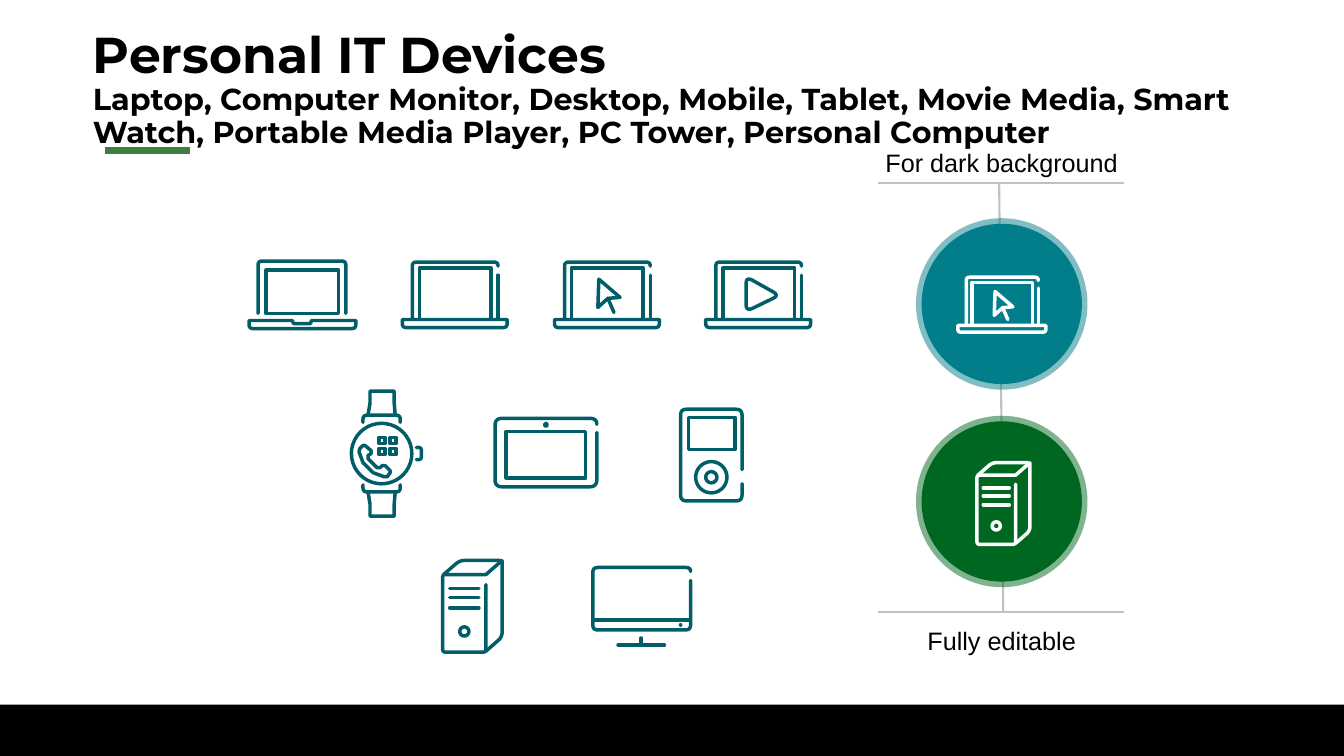
from math import cos, pi, sin

from lxml import etree
from pptx import Presentation
from pptx.dml.color import RGBColor
from pptx.enum.shapes import MSO_CONNECTOR, MSO_SHAPE
from pptx.enum.text import MSO_ANCHOR, MSO_AUTO_SIZE, PP_ALIGN
from pptx.oxml.ns import qn
from pptx.util import Inches, Pt

RECT, OVAL = MSO_SHAPE.RECTANGLE, MSO_SHAPE.OVAL
STRAIGHT = MSO_CONNECTOR.STRAIGHT
LEFT, CENTER = PP_ALIGN.LEFT, PP_ALIGN.CENTER
MIDDLE = MSO_ANCHOR.MIDDLE
NO_FIT, GROW = MSO_AUTO_SIZE.NONE, MSO_AUTO_SIZE.SHAPE_TO_FIT_TEXT

BLACK, WHITE, GREY = "000000", "FFFFFF", "BCC4C0"
ICON, TEAL, GREEN, ACCENT = "015E68", "027E8A", "006721", "3D7E41"


def rgb(value):
    return RGBColor.from_string(value)


def add_text(p, text, size=18, font="Arial", color=BLACK, bold=False):
    r = p.add_run()
    r.text = text
    r.font.size, r.font.name, r.font.bold = Pt(size), font, bold
    r.font.color.rgb = rgb(color)


# Icon outlines are in hundredths of an inch from the icon's top left corner
def path(*corners, closed=False):
    """Outline through corners (x, y) or (x, y, corner radius)."""
    points = []
    for i, (x, y, *radius) in enumerate(corners):
        if not radius:
            points.append((x, y))
            continue
        ends = []
        for nx, ny, *_ in (corners[i - 1], corners[(i + 1) % len(corners)]):
            length = ((nx - x) ** 2 + (ny - y) ** 2) ** 0.5
            t = min(1, radius[0] / length)
            ends.append((x + (nx - x) * t, y + (ny - y) * t))
        (ax, ay), (bx, by) = ends
        for t in (0, 0.2, 0.4, 0.6, 0.8, 1):
            u = 1 - t
            points.append((u * u * ax + 2 * u * t * x + t * t * bx,
                           u * u * ay + 2 * u * t * y + t * t * by))
    return points, closed


def box(x1, y1, x2, y2):
    return path((x1, y1), (x2, y1), (x2, y2), (x1, y2), closed=True)


def circle(x, y, radius, steps=40):
    angles = [2 * pi * i / steps for i in range(steps)]
    return [(x + radius * cos(a), y + radius * sin(a)) for a in angles], True


LAPTOP = [
    path((95, 13), (95, 56)),
    path((95, 4), (95, 0, 4), (10, 0, 4), (10, 56)),
    path((88, 56), (88, 6), (17, 6), (17, 56)),
    path((0, 57), (0, 65, 4), (104, 65, 4), (104, 57), closed=True),
]
POINTER_LAPTOP = LAPTOP + [
    path((65, 35), (44, 17), (43, 45), (53, 36), closed=True),
    path((59, 50), (53, 36)),
]
MOVIE_LAPTOP = LAPTOP + [
    path((40, 14.5, 7), (73, 33, 7), (40, 49, 7), closed=True),
]
NOTCHED_LAPTOP = [
    path((106, 59), (106, 67, 4), (0, 67, 4), (0, 59), (43, 59), (44, 62),
         (61, 62), (62, 59), closed=True),
    path((96, 52), (96, 0, 4), (9, 0, 4), (9, 52)),
    box(17, 9, 89, 52),
]
STRAP = [(43, 24), (42, 12), (42, 0), (18, 0), (18, 12), (16, 24)]
LUGS = [(48, 31), (48, 24, 4), (11, 24, 4), (11, 31)]
WATCH = [
    circle(29.5, 62, 30),
    path(*STRAP),
    path(*LUGS),
    path(*[(x, 124 - y) for x, y in STRAP]),
    path(*[(x, 124 - y, *radius) for x, y, *radius in LUGS]),
    path((64, 68), (69, 68, 3), (69, 56, 3), (64, 56)),
    path((38, 81), (35, 85), (32, 85), (21, 81), (11, 71), (7, 60), (8, 57),
         (11, 54), (13, 54), (19, 59), (19, 62), (16, 64), (16, 67), (25, 76),
         (28, 76), (30, 74), (33, 74), (38, 79), closed=True),
] + [box(x, y, x + 6, y + 6) for x in (27, 38) for y in (46, 57)]
TABLET = [
    path((101, 14), (101, 68, 7), (0, 68, 7), (0, 0, 7), (101, 0, 7), (101, 6)),
    box(11, 13, 90, 59),
    circle(50.5, 6.5, 1.5, steps=4),
]
MEDIA_PLAYER = [
    path((61, 74), (61, 91, 6), (0, 91, 6), (0, 0, 6), (61, 0, 6), (61, 60)),
    circle(30.5, 67.5, 15.5),
    circle(30.5, 67.5, 5.5),
    box(8, 8, 54, 40),
]
TOWER = [
    path((43, 14), (59, 0, 1), (59, 76, 5), (43, 90)),
    path((57, 0), (17, 0, 5), (1, 14)),
    path((43, 14), (0, 14, 3), (0, 91, 3), (43, 91, 3), (43, 24)),
    circle(21.5, 70.5, 4.5),
] + [path((7, y), (36, y)) for y in (28, 37, 47)]
MONITOR = [
    path((97, 13), (97, 62, 5), (0, 62, 5), (0, 0, 5), (97, 0, 5), (97, 4)),
    path((0, 52), (96, 52)),
    path((48, 70), (48, 76)),
    path((25, 77), (71, 77)),
    path((87, 57), (87.2, 57)),
]


class DeviceSlide:
    def __init__(self, prs):
        self.s = prs.slides.add_slide(prs.slide_layouts[5])
        self.shapes = self.s.shapes

    def title(self, heading, subtitle):
        sp = self.shapes.title
        sp.left, sp.top = Inches(0.92), Inches(0.4)
        sp.width, sp.height = Inches(11.5), Inches(0.98)
        tf = sp.text_frame
        tf.margin_left = tf.margin_right = tf.margin_top = tf.margin_bottom = 0
        tf.vertical_anchor, tf.word_wrap, tf.auto_size = MIDDLE, True, NO_FIT
        p = tf.paragraphs[0]
        p.alignment, p.line_spacing = LEFT, 0.9
        add_text(p, heading, size=36, font="Montserrat", bold=True)
        p.add_line_break()
        add_text(p, subtitle, size=21.6, font="Montserrat", bold=True)

    def label(self, text, x, y, w):
        sp = self.shapes.add_textbox(Inches(x), Inches(y), Inches(w), Inches(0.4))
        tf = sp.text_frame
        tf.word_wrap, tf.auto_size = True, GROW
        tf.paragraphs[0].alignment = CENTER
        add_text(tf.paragraphs[0], text)

    def shape(self, kind, x, y, w, h, fill, halo=0):
        sp = self.shapes.add_shape(kind, Inches(x), Inches(y), Inches(w), Inches(h))
        sp.shadow.inherit = False
        sp.fill.solid()
        sp.fill.fore_color.rgb = rgb(fill)
        if not halo:
            sp.line.fill.background()
            return
        sp.line.width = Pt(halo)
        sp.line.color.rgb = rgb(fill)
        color = sp.line._ln.find(".//" + qn("a:srgbClr"))
        etree.SubElement(color, qn("a:alpha"), val="50000")

    def line(self, x1, y1, x2, y2, color=GREY, width=1.5):
        sp = self.shapes.add_connector(
            STRAIGHT, Inches(x1), Inches(y1), Inches(x2), Inches(y2))
        sp.line.color.rgb = rgb(color)
        sp.line.width = Pt(width)
        etree.SubElement(sp._element.spPr, qn("a:effectLst"))

    def icon(self, outlines, x, y, color=ICON, scale=1.0):
        builder = None
        for points, closed in outlines:
            (x0, y0), *rest = [(Inches(x + px * scale / 100),
                                Inches(y + py * scale / 100)) for px, py in points]
            if builder is None:
                builder = self.shapes.build_freeform(x0, y0)
            else:
                builder.move_to(x0, y0)
            builder.add_line_segments(rest, close=closed)
        sp = builder.convert_to_shape()
        sp.shadow.inherit = False
        sp.fill.background()
        sp.line.color.rgb = rgb(color)
        sp.line.width = Pt(2.5)
        sp.line._ln.set("cap", "rnd")
        etree.SubElement(sp.line._ln, qn("a:round"))


def main():
    prs = Presentation()
    prs.slide_width, prs.slide_height = Inches(13.33), Inches(7.5)
    slide = DeviceSlide(prs)

    # Footer bar, title and accent line
    slide.shape(RECT, 0, 6.99, 13.33, 0.51, BLACK)
    slide.line(1.04, 1.49, 1.88, 1.49, ACCENT, 5)
    slide.title("Personal IT Devices",
                "Laptop, Computer Monitor, Desktop, Mobile, Tablet, Movie Media, "
                "Smart Watch, Portable Media Player, PC Tower, Personal Computer")

    # Device icons
    for outlines, x, y in (
            (NOTCHED_LAPTOP, 2.47, 2.59), (LAPTOP, 3.99, 2.6),
            (POINTER_LAPTOP, 5.5, 2.6), (MOVIE_LAPTOP, 7, 2.6),
            (WATCH, 3.49, 3.88), (TABLET, 4.91, 4.15), (MEDIA_PLAYER, 6.75, 4.06),
            (TOWER, 4.39, 5.56), (MONITOR, 5.88, 5.63)):
        slide.icon(outlines, x, y)

    # Examples for dark background
    slide.line(9.91, 1.82, 9.95, 6.07)
    for y in (1.82, 6.07):
        slide.line(8.71, y, 11.15, y)
    for y, fill in ((2.22, TEAL), (4.18, GREEN)):
        slide.shape(OVAL, 9.14, y, 1.59, 1.59, fill, halo=8)
    slide.icon(POINTER_LAPTOP, 9.5, 2.75, WHITE, 0.84)
    slide.icon(TOWER, 9.69, 4.59, WHITE, 0.89)
    slide.label("For dark background", 8.68, 1.41, 2.51)
    slide.label("Fully editable", 8.36, 6.15, 3.15)

    prs.save("out.pptx")


if __name__ == "__main__":
    main()
